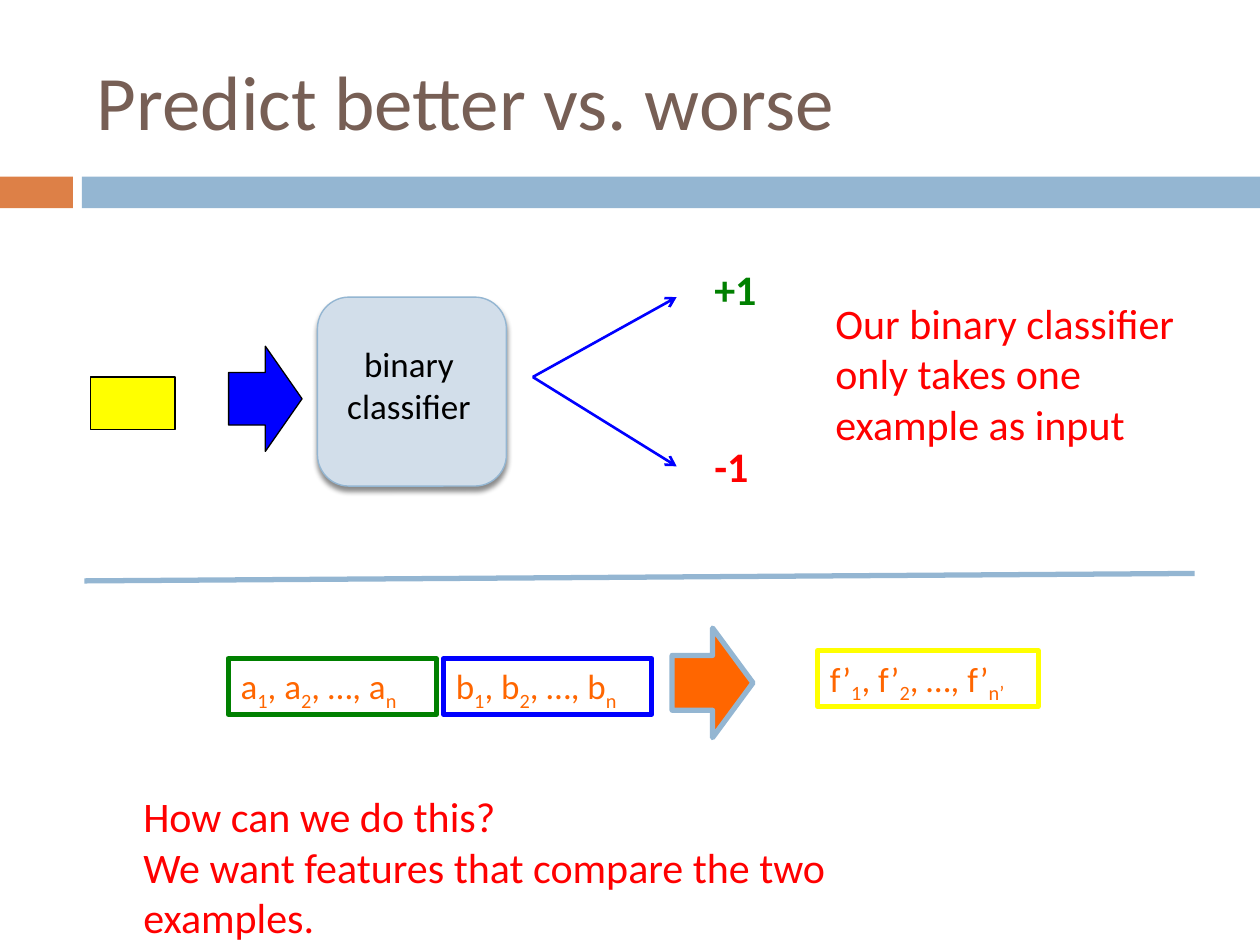
from dataclasses import dataclass

from lxml.etree import SubElement
from pptx import Presentation
from pptx.dml.color import RGBColor
from pptx.enum.shapes import MSO_CONNECTOR, MSO_SHAPE
from pptx.enum.text import MSO_ANCHOR, PP_ALIGN
from pptx.oxml.ns import qn
from pptx.util import Cm, Pt

FONT = "Calibri"
BLUE, GREEN, RED, YELLOW = "0000FF", "008000", "FF0000", "FFFF00"
ORANGE, SKY, BLACK = "FF6600", "94B6D2", "000000"


@dataclass
class Area:
    left: float
    top: float
    width: float
    height: float

    def lengths(self) -> list:
        return [Cm(value) for value in (self.left, self.top, self.width, self.height)]


@dataclass
class Block:
    kind: MSO_SHAPE
    area: Area
    fill: str | None = None
    line: str | None = None
    weight: float = 0.75
    rotation: float = 0


@dataclass
class Label:
    area: Area
    lines: list[str]
    color: str
    size: float = 24
    bold: bool = False
    wrap: bool = True
    align: PP_ALIGN = PP_ALIGN.LEFT


@dataclass
class Line:
    start: tuple[float, float]
    end: tuple[float, float]
    color: str
    weight: float
    arrow: bool = False


@dataclass
class Vector:
    area: Area
    symbol: str
    last: str
    border: str


def rgb(color: str) -> RGBColor:
    return RGBColor.from_string(color)


def add_span(para, text: str, *, size: float, color: str, bold: bool = False, subscript: bool = False) -> None:
    span = para.add_run()
    span.text = text
    span.font.name = FONT
    span.font.size = Pt(size)
    span.font.bold = bold
    span.font.color.rgb = rgb(color)
    if subscript:
        span.font._element.set("baseline", "-25000")


def add_block(page, block: Block):
    shape = page.shapes.add_shape(block.kind, *block.area.lengths())
    shape.shadow.inherit = False
    shape.rotation = block.rotation
    if block.fill:
        shape.fill.solid()
        shape.fill.fore_color.rgb = rgb(block.fill)
    else:
        shape.fill.background()
    if block.line:
        shape.line.color.rgb = rgb(block.line)
        shape.line.width = Pt(block.weight)
    else:
        shape.line.fill.background()
    return shape


def add_shadow(shape) -> None:
    effects = shape._element.spPr.find(qn("a:effectLst"))
    shadow = SubElement(effects, qn("a:outerShdw"), blurRad=str(Pt(3)), dist=str(Pt(2.4)),
                        dir="5400000", rotWithShape="0")
    color = SubElement(shadow, qn("a:srgbClr"), val=BLACK)
    SubElement(color, qn("a:alpha"), val="45000")


def add_label(page, label: Label) -> None:
    frame = page.shapes.add_textbox(*label.area.lengths()).text_frame
    frame.word_wrap = label.wrap
    for index, text in enumerate(label.lines):
        para = frame.add_paragraph() if index else frame.paragraphs[0]
        para.alignment = label.align
        add_span(para, text, size=label.size, color=label.color, bold=label.bold)


def add_line(page, line: Line) -> None:
    ends = [Cm(value) for value in (*line.start, *line.end)]
    connector = page.shapes.add_connector(MSO_CONNECTOR.STRAIGHT, *ends)
    connector.line.color.rgb = rgb(line.color)
    connector.line.width = Pt(line.weight)
    if line.arrow:
        SubElement(connector.line._get_or_add_ln(), qn("a:tailEnd"), type="arrow")
    SubElement(connector._element.spPr, qn("a:effectLst"))


def add_vector(page, vector: Vector) -> None:
    box = add_block(page, Block(MSO_SHAPE.RECTANGLE, vector.area, line=vector.border, weight=3))
    frame = box.text_frame
    frame.word_wrap = False
    frame.vertical_anchor = MSO_ANCHOR.TOP
    para = frame.paragraphs[0]
    para.alignment = PP_ALIGN.LEFT
    for lead, index in (("", "1"), (", ", "2"), (", …, ", vector.last)):
        add_span(para, lead + vector.symbol, size=20, color=ORANGE)
        add_span(para, index, size=20, color=ORANGE, subscript=True)


def add_title(page, text: str) -> None:
    title = page.shapes.title
    title.left, title.top, title.width, title.height = Area(1.7, 0.64, 22.66, 2.74).lengths()
    title.text_frame.vertical_anchor = MSO_ANCHOR.MIDDLE
    para = title.text_frame.paragraphs[0]
    para.alignment = PP_ALIGN.LEFT
    add_span(para, text, size=44, color="775F55")


def main() -> None:
    deck = Presentation()
    deck.slide_width, deck.slide_height = Cm(25.4), Cm(19.05)
    page = deck.slides.add_slide(deck.slide_layouts[5])
    add_title(page, "Predict better vs. worse")

    blocks = [
        Block(MSO_SHAPE.RECTANGLE, Area(0, 3.56, 1.47, 0.64), "DD8047"),
        Block(MSO_SHAPE.RECTANGLE, Area(1.65, 3.56, 23.75, 0.64), SKY),
        Block(MSO_SHAPE.RECTANGLE, Area(1.83, 7.6, 1.7, 1.06), YELLOW, BLACK),
        Block(MSO_SHAPE.RIGHT_ARROW, Area(4.61, 6.98, 1.48, 2.12), BLUE, BLACK),
        Block(MSO_SHAPE.DOWN_ARROW, Area(13.26, 12.95, 2.21, 1.63), ORANGE, SKY, 3, 270),
    ]
    for block in blocks:
        add_block(page, block)
    classifier = Block(MSO_SHAPE.ROUNDED_RECTANGLE, Area(6.4, 5.99, 3.81, 3.81), "D2DEEA", SKY, 0.79)
    add_shadow(add_block(page, classifier))

    fork = (10.74, 7.6)
    lines = [
        Line(fork, (13.64, 5.99), BLUE, 1.5, arrow=True),
        Line(fork, (13.64, 9.4), BLUE, 1.5, arrow=True),
        Line((1.7, 11.71), (24.08, 11.56), SKY, 3),
    ]
    for line in lines:
        add_line(page, line)

    vectors = [
        Vector(Area(4.6, 13.28, 4.2, 1.12), "a", "n", GREEN),
        Vector(Area(8.94, 13.28, 4.2, 1.12), "b", "n", BLUE),
        Vector(Area(16.48, 13.12, 4.45, 1.12), "f’", "n’", YELLOW),
    ]
    for vector in vectors:
        add_vector(page, vector)

    labels = [
        Label(Area(6.25, 6.78, 3.99, 1.96), ["binary classifier"], BLACK, 20, align=PP_ALIGN.CENTER),
        Label(Area(14.15, 5.18, 1.55, 1.27), ["+1"], GREEN, bold=True, wrap=False),
        Label(Area(14.15, 8.76, 1.24, 1.27), ["-1"], RED, bold=True, wrap=False),
        Label(Area(16.59, 5.87, 8.05, 3.33), ["Our binary classifier only takes one example as input"], RED),
        Label(Area(2.64, 15.82, 17.73, 2.31),
              ["How can we do this?", "We want features that compare the two examples."], RED),
    ]
    for label in labels:
        add_label(page, label)

    deck.save("out.pptx")


if __name__ == "__main__":
    main()
